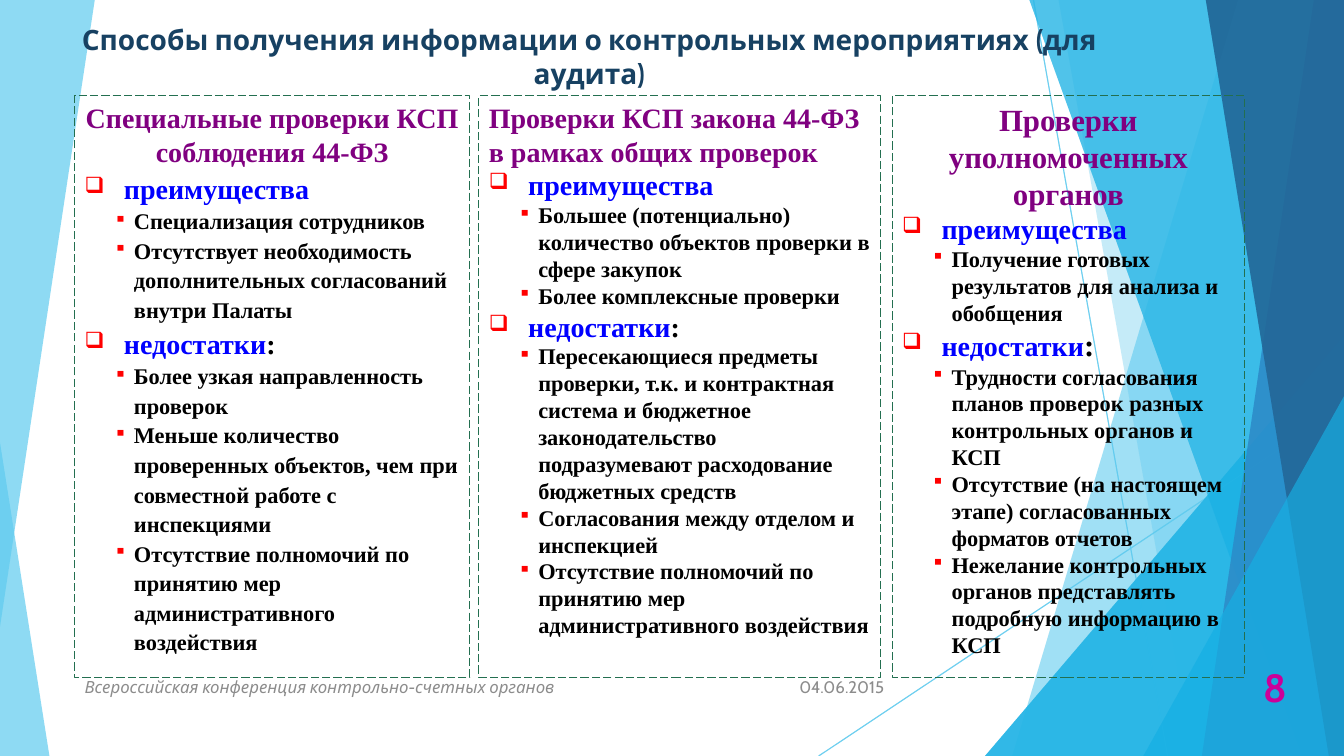
from lxml import etree
from pptx import Presentation
from pptx import util as u
from pptx.dml.color import RGBColor
from pptx.enum import dml, shapes, text
from pptx.oxml import ns

COLORS = {
    "sky": "5FCBEF", "cyan": "17B0E4", "blue": "2E83C3", "navy": "226292",
    "title": "174162", "footer": "8C8C8C", "number": "CC0099",
    "border": "236F50", "heading": "800080", "topic": "0000FF",
    "body": "000000", "bullet": "FF0000",
}
WIDTH, HEIGHT = 13.33, 7.5
SERIF, SANS = "Times New Roman", "Cabin"
PROS, CONS = "преимущества", "недостатки"
ALIGN = text.PP_ALIGN

PANELS = [
    dict(left=0.74, width=3.92, heading="Специальные проверки КСП соблюдения 44-ФЗ",
         align=ALIGN.CENTER, before=10, spacing=1.1,
         pros=["Специализация сотрудников",
               "Отсутствует необходимость дополнительных согласований внутри Палаты"],
         cons=["Более узкая направленность проверок",
               "Меньше количество проверенных объектов, чем при совместной работе с инспекциями",
               "Отсутствие полномочий по принятию мер административного воздействия"]),
    dict(left=4.75, width=3.98, heading="Проверки КСП закона 44-ФЗ в рамках общих проверок",
         pros=["Большее (потенциально) количество объектов проверки в сфере закупок",
               "Более комплексные проверки"],
         cons=["Пересекающиеся предметы проверки, т.к. и контрактная система и бюджетное "
               "законодательство подразумевают расходование бюджетных средств",
               "Согласования между отделом и инспекцией",
               "Отсутствие полномочий по принятию мер административного воздействия"]),
    dict(left=8.85, width=3.49, heading="Проверки уполномоченных органов",
         align=ALIGN.CENTER, before=10, heading_size=22, colon_size=22,
         pros=["Получение готовых результатов для анализа и обобщения"],
         cons=["Трудности согласования планов проверок разных контрольных органов и КСП",
               "Отсутствие (на настоящем этапе) согласованных форматов отчетов",
               "Нежелание контрольных органов представлять подробную информацию в КСП"]),
]


def rgb(name):
    return RGBColor.from_string(COLORS[name])


def add_text(paragraph, content, size=16, color="body", font=SERIF, bold=True, italic=False):
    run = paragraph.add_run()
    run.text = content
    run.font.size = u.Pt(size)
    run.font.name = font
    run.font.bold = bold
    run.font.italic = italic
    run.font.color.rgb = rgb(color)


def set_opacity(shape, percent):
    for color in shape._element.spPr.iter(ns.qn("a:srgbClr")):
        etree.SubElement(color, ns.qn("a:alpha"), val=str(percent * 1000))


def paint(shape, color, opacity):
    shape.shadow.inherit = False
    shape.fill.solid()
    shape.fill.fore_color.rgb = rgb(color)
    shape.line.fill.background()
    set_opacity(shape, opacity)


# Background facets
def add_ray(slide, start, end):
    line = slide.shapes.add_connector(
        shapes.MSO_CONNECTOR.STRAIGHT, *(u.Inches(value) for value in start + end))
    line.line.color.rgb = rgb("sky")
    line.line.width = u.Pt(0.75)
    set_opacity(line, 70)
    etree.SubElement(line._element.spPr, ns.qn("a:effectLst"))


def add_polygon(slide, points, color, opacity):
    corners = [(u.Inches(x), u.Inches(y)) for x, y in points]
    builder = slide.shapes.build_freeform(*corners[0])
    builder.add_line_segments(corners[1:], close=True)
    paint(builder.convert_to_shape(), color, opacity)


def add_band(slide, top, bottom, color, opacity):
    """Facet from two points on the slide's edges to its right side."""
    add_polygon(slide, [(top, 0), (WIDTH, 0), (WIDTH, HEIGHT), (bottom, HEIGHT)],
                color, opacity)


def add_triangle(slide, left, top, width, apex, color, opacity):
    triangle = slide.shapes.add_shape(
        shapes.MSO_SHAPE.ISOSCELES_TRIANGLE, u.Inches(left), u.Inches(top),
        u.Inches(width), u.Inches(HEIGHT - top))
    triangle.adjustments[0] = apex
    paint(triangle, color, opacity)


def add_right_facets(slide):
    add_ray(slide, (10.25, 0), (11.58, HEIGHT))
    add_ray(slide, (WIDTH, 4.03), (8.12, HEIGHT))
    add_band(slide, 12.28, 10.04, "sky", 36)
    add_band(slide, 10.5, 11.83, "sky", 20)
    add_triangle(slide, 9.77, 3.33, 3.56, 1, "cyan", 66)
    add_band(slide, 10.21, 12.91, "cyan", 50)
    add_band(slide, 13.03, 11.92, "blue", 70)
    add_band(slide, 11.96, 13.18, "navy", 80)
    add_triangle(slide, 11.34, 3.93, 1.99, 1, "cyan", 66)


def add_background(slide):
    add_right_facets(slide)
    add_triangle(slide, 0, 4.39, 0.49, 0, "sky", 70)
    add_polygon(slide, [(0, 0), (0.94, 0), (0, 6.22)], "sky", 70)
    add_right_facets(slide)  # second layer deepens the colours


# Title and footer
def add_title(slide, left, top, width, height, content):
    title = slide.shapes.title
    title.left, title.top = u.Inches(left), u.Inches(top)
    title.width, title.height = u.Inches(width), u.Inches(height)
    frame = title.text_frame
    frame.vertical_anchor = text.MSO_ANCHOR.BOTTOM
    frame.auto_size = text.MSO_AUTO_SIZE.NONE
    frame.paragraphs[0].alignment = ALIGN.CENTER
    add_text(frame.paragraphs[0], content, size=20, color="title", font=SANS)
    slide.shapes._spTree.append(title._element)  # bring above the facets


def add_footer_item(slide, left, width, content, align, **style):
    box = slide.shapes.add_textbox(
        u.Inches(left), u.Inches(6.61), u.Inches(width), u.Inches(0.4))
    frame = box.text_frame
    frame.word_wrap = True
    frame.vertical_anchor = text.MSO_ANCHOR.MIDDLE
    frame.paragraphs[0].alignment = align
    add_text(frame.paragraphs[0], content, font=SANS, **style)


def add_footer(slide):
    add_footer_item(slide, 7.71, 1.16, "04.06.2015", ALIGN.RIGHT,
                    size=12, color="footer", bold=False)
    add_footer_item(slide, 0.74, 6.89, "Всероссийская конференция контрольно-счетных органов",
                    ALIGN.LEFT, size=12, color="footer", bold=False, italic=True)
    add_footer_item(slide, 12.11, 0.75, "8", ALIGN.RIGHT, size=28, color="number")


# Comparison panels
def set_bullet(paragraph, character, margin, hanging):
    properties = paragraph._p.get_or_add_pPr()
    properties.set("marL", str(u.Inches(margin)))
    properties.set("indent", str(-u.Inches(hanging)))
    color = etree.SubElement(properties, ns.qn("a:buClr"))
    etree.SubElement(color, ns.qn("a:srgbClr"), val=COLORS["bullet"])
    etree.SubElement(properties, ns.qn("a:buSzPct"), val="80000")
    etree.SubElement(properties, ns.qn("a:buChar"), char=character)


def add_bullet(frame, level, spacing):
    paragraph = frame.add_paragraph()
    paragraph.level = level
    paragraph.alignment = ALIGN.LEFT
    paragraph.line_spacing = spacing
    set_bullet(paragraph, *(("❑", 0.39, 0.39) if level == 1 else ("▪", 0.49, 0.2)))
    return paragraph


def add_panel(slide, left, width, heading, pros, cons, align=ALIGN.LEFT, before=0,
              spacing=1.0, heading_size=20, colon_size=20):
    panel = slide.shapes.add_shape(
        shapes.MSO_SHAPE.RECTANGLE, u.Inches(left), u.Inches(0.95),
        u.Inches(width), u.Inches(5.77))
    panel.shadow.inherit = False
    panel.fill.background()
    panel.line.color.rgb = rgb("border")
    panel.line.width = u.Pt(0.75)
    panel.line.dash_style = dml.MSO_LINE.LONG_DASH
    frame = panel.text_frame
    frame.word_wrap = True
    frame.vertical_anchor = text.MSO_ANCHOR.TOP

    paragraph = frame.paragraphs[0]
    paragraph.level = 1
    paragraph.alignment = align
    paragraph.space_before = u.Pt(before)
    paragraph._p.get_or_add_pPr().set("marL", "0")
    add_text(paragraph, heading, size=heading_size, color="heading")

    for topic, colon, items in ((PROS, "", pros), (CONS, ":", cons)):
        paragraph = add_bullet(frame, 1, spacing)
        add_text(paragraph, topic, size=20, color="topic")
        if colon:
            add_text(paragraph, colon, size=colon_size)
        for item in items:
            add_text(add_bullet(frame, 2, spacing), item)


def main():
    presentation = Presentation()
    presentation.slide_width = u.Inches(WIDTH)
    presentation.slide_height = u.Inches(HEIGHT)
    slide = presentation.slides.add_slide(presentation.slide_layouts[5])
    add_background(slide)
    add_title(slide, 0.63, 0.18, 10.43, 0.76,
              "Способы получения информации о контрольных мероприятиях (для аудита)")
    add_footer(slide)
    for panel in PANELS:
        add_panel(slide, **panel)
    presentation.save("out.pptx")


if __name__ == "__main__":
    main()
